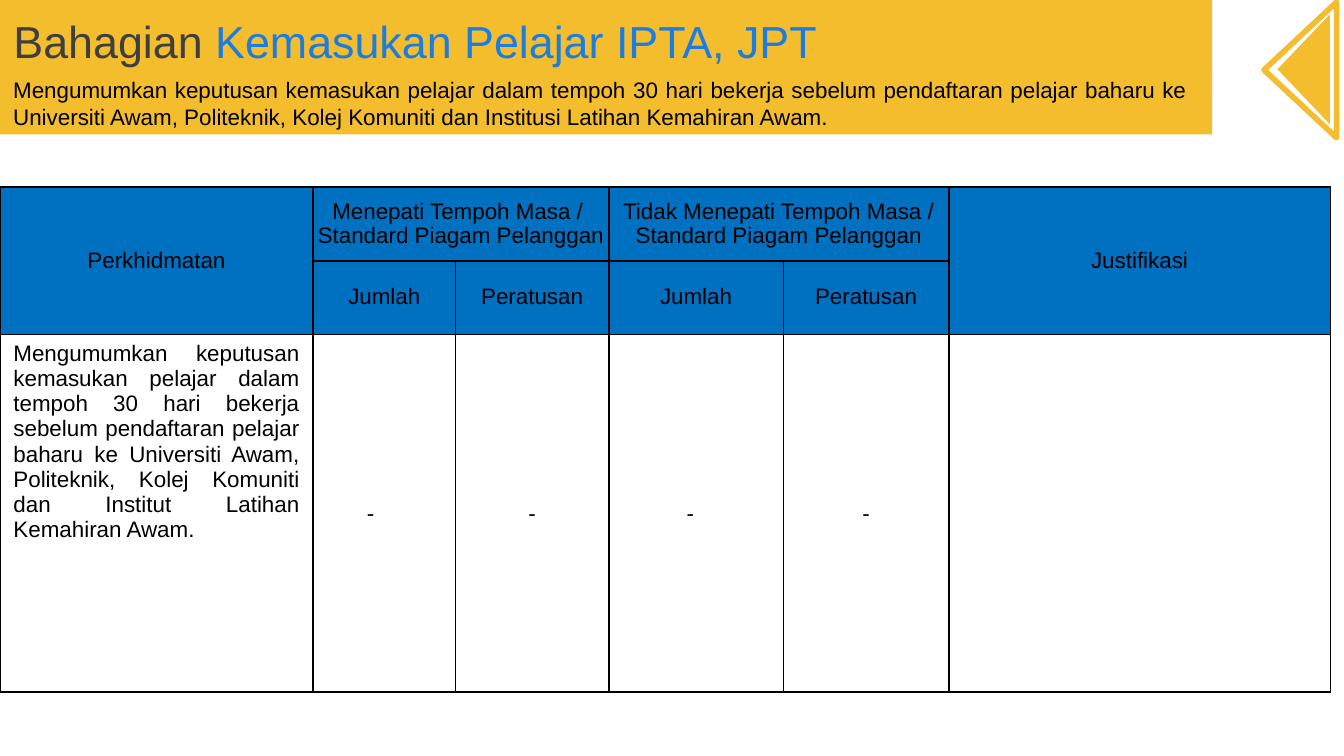
from pptx import Presentation
from pptx.dml.color import RGBColor
from pptx.enum.shapes import MSO_SHAPE
from pptx.enum.text import MSO_ANCHOR, MSO_AUTO_SIZE, PP_ALIGN
from pptx.oxml import parse_xml
from pptx.util import Inches, Pt

LEFT, CENTER, JUSTIFY = PP_ALIGN.LEFT, PP_ALIGN.CENTER, PP_ALIGN.JUSTIFY
TOP, MIDDLE = MSO_ANCHOR.TOP, MSO_ANCHOR.MIDDLE
RECTANGLE, TRIANGLE = MSO_SHAPE.RECTANGLE, MSO_SHAPE.ISOSCELES_TRIANGLE
NO_AUTOFIT = MSO_AUTO_SIZE.NONE
NAMESPACE = "http://schemas.openxmlformats.org/drawingml/2006/main"
YELLOW, BLUE, BLACK = "F4BD2D", "0070C0", "000000"


def color(value):
    return RGBColor.from_string(value)


def write(paragraph, text, size=12, fill=BLACK, align=LEFT, spacing=None):
    paragraph.alignment = align
    paragraph.line_spacing = spacing
    run = paragraph.add_run()
    run.text = text
    run.font.name = "Arial"
    run.font.size = Pt(size)
    run.font.color.rgb = color(fill)


presentation = Presentation()
presentation.slide_width = Inches(10)
presentation.slide_height = presentation.slide_width * 9 // 16
slide = presentation.slides.add_slide(presentation.slide_layouts[5])
shapes = slide.shapes

title = shapes.title
banner = shapes.add_shape(RECTANGLE, 0, 0, Inches(9.02), Inches(1))
banner.shadow.inherit = False
banner.fill.solid()
banner.fill.fore_color.rgb = color(YELLOW)
banner.line.fill.background()

description = shapes.add_textbox(0, Inches(0.52), Inches(8.94), Inches(0.5))
description.text_frame.word_wrap = True
write(
    description.text_frame.paragraphs[0],
    "Mengumumkan keputusan kemasukan pelajar dalam tempoh 30 hari bekerja sebelum "
    "pendaftaran pelajar baharu ke Universiti Awam, Politeknik, Kolej Komuniti dan "
    "Institusi Latihan Kemahiran Awam.",
    align=JUSTIFY,
)

description.element.addnext(title.element)
title.left, title.top = 0, Inches(0.01)
title.width, title.height = Inches(6.42), Inches(0.59)
title.text_frame.auto_size = NO_AUTOFIT
title.text_frame.vertical_anchor = MIDDLE
heading = title.text_frame.paragraphs[0]
write(heading, "Bahagian ", size=24, fill="3F3F3F")
write(heading, "Kemasukan Pelajar IPTA, JPT", size=24, fill="1C7DE1")

column_widths = [2.33, 1.06, 1.14, 1.3, 1.23, 2.84]
row_heights = [0.55, 0.55, 2.66]
table = shapes.add_table(
    len(row_heights), len(column_widths), 0, Inches(1.39),
    Inches(sum(column_widths)), Inches(sum(row_heights)),
).table
for column, width in zip(table.columns, column_widths):
    column.width = Inches(width)
for row, height in zip(table.rows, row_heights):
    row.height = Inches(height)

for row_index, row in enumerate(table.rows):
    for cell in row.cells:
        properties = cell._tc.get_or_add_tcPr()
        for side in ("lnL", "lnR", "lnT", "lnB"):
            properties.append(parse_xml(
                f'<a:{side} xmlns:a="{NAMESPACE}" w="{Pt(1)}">'
                f'<a:solidFill><a:srgbClr val="{BLACK}"/></a:solidFill></a:{side}>'
            ))
        if row_index < 2:
            cell.fill.solid()
            cell.fill.fore_color.rgb = color(BLUE)
        else:
            cell.fill.background()

for first, last in [((0, 0), (1, 0)), ((0, 1), (0, 2)), ((0, 3), (0, 4)), ((0, 5), (1, 5))]:
    table.cell(*first).merge(table.cell(*last))

service = (
    "Mengumumkan keputusan kemasukan pelajar dalam tempoh 30 hari bekerja sebelum "
    "pendaftaran pelajar baharu ke Universiti Awam, Politeknik, Kolej Komuniti dan "
    "Institut Latihan Kemahiran Awam."
)
cells = [
    (0, 0, ["Perkhidmatan"], CENTER, MIDDLE, None, 0.1, 0.05),
    (0, 1, ["Menepati Tempoh Masa / ", "Standard Piagam Pelanggan"], CENTER, MIDDLE, 0.96, 0, 0),
    (0, 3, ["Tidak Menepati Tempoh Masa / Standard Piagam Pelanggan"], CENTER, MIDDLE, 0.96, 0, 0),
    (0, 5, ["Justifikasi"], CENTER, MIDDLE, None, 0, 0),
    (2, 0, [service], JUSTIFY, TOP, None, 0.1, 0.05),
]
for index, label in enumerate(["Jumlah", "Peratusan"] * 2, start=1):
    cells.append((1, index, [label], CENTER, MIDDLE, 0.88, 0, 0))
for index, (align, indent) in enumerate(
    [(LEFT, 0.4), (CENTER, 0.07), (JUSTIFY, 0.58), (CENTER, 0.07)], start=1
):
    cells.append((2, index, ["-"], align, MIDDLE, None, indent, 0.05))

for row_index, column_index, lines, align, anchor, spacing, side_margin, edge_margin in cells:
    cell = table.cell(row_index, column_index)
    cell.vertical_anchor = anchor
    cell.margin_left = Inches(side_margin)
    cell.margin_right = Inches(min(side_margin, 0.1))
    cell.margin_top = cell.margin_bottom = Inches(edge_margin)
    for index, line in enumerate(lines):
        frame = cell.text_frame
        paragraph = frame.add_paragraph() if index else frame.paragraphs[0]
        write(paragraph, line, align=align, spacing=spacing)

for left, top, width, height, filled in [
    (9.29, 0.32, 0.82, 0.39, True),
    (9.17, 0.25, 1.01, 0.54, False),
]:
    triangle = shapes.add_shape(TRIANGLE, Inches(left), Inches(top), Inches(width), Inches(height))
    triangle.rotation = 270
    triangle.shadow.inherit = False
    if filled:
        triangle.fill.solid()
        triangle.fill.fore_color.rgb = color(YELLOW)
        triangle.line.fill.background()
    else:
        triangle.fill.background()
        triangle.line.color.rgb = color(YELLOW)
        triangle.line.width = Pt(3)

presentation.save("out.pptx")
